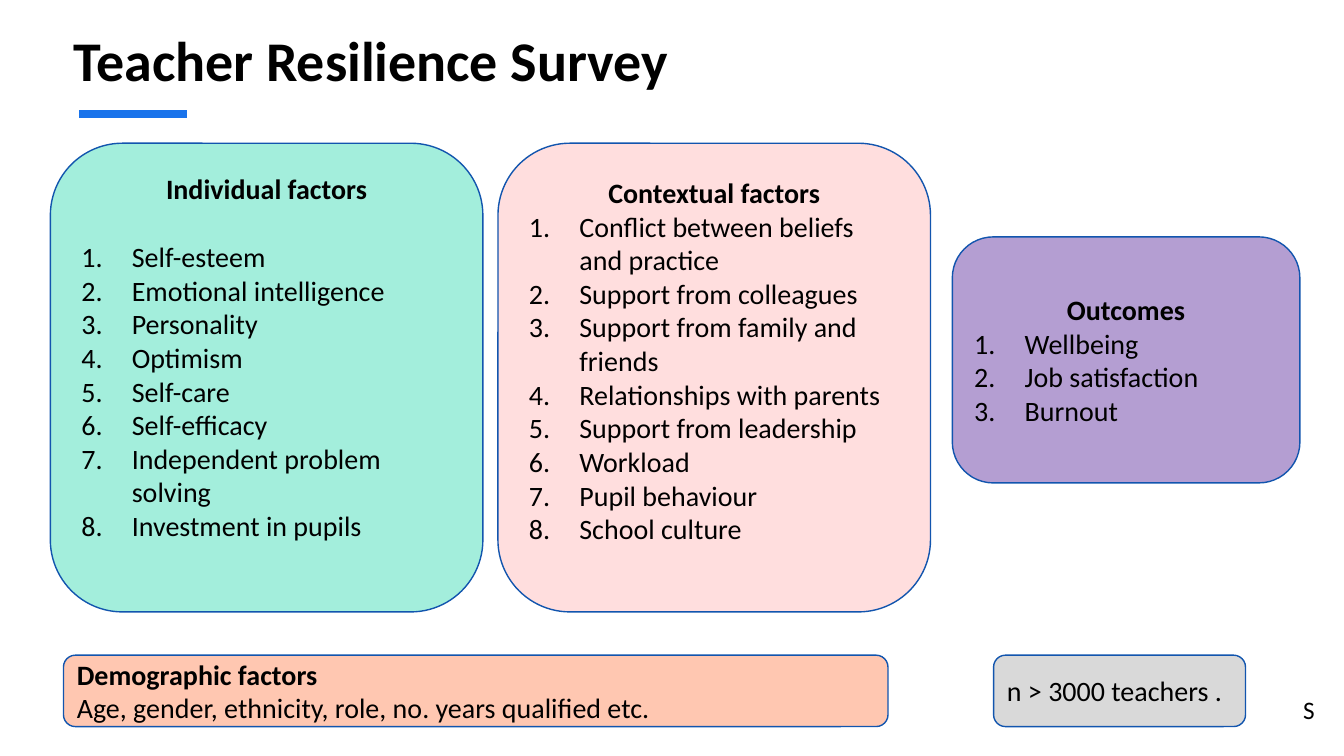
import pptx
import pptx.dml.color
import pptx.enum.shapes
import pptx.enum.text
import pptx.oxml.ns
import pptx.util
from lxml import etree

Cm, Pt = pptx.util.Cm, pptx.util.Pt
ALIGN = pptx.enum.text.PP_ALIGN
ANCHOR = pptx.enum.text.MSO_ANCHOR
INDENT = Cm(1.27)
TEXT_LINE = Pt(24.4)


def rgb(code):
    return pptx.dml.color.RGBColor.from_string(code)


def write(paragraph, text, size=20, bold=False, align=ALIGN.LEFT):
    paragraph.alignment = align
    run = paragraph.add_run()
    run.text = text
    for name, value in {"name": "Calibri", "size": Pt(size), "bold": bold}.items():
        setattr(run.font, name, value)
    run.font.color.rgb = rgb("000000")


deck = pptx.Presentation()
deck.slide_width, deck.slide_height = Cm(33.87), Cm(19.05)
slide = deck.slides.add_slide(deck.slide_layouts[5])

# Title and its underline
title = slide.shapes.title
title_format = {"left": Cm(1.6), "top": Cm(0.36), "width": Cm(29.21), "height": Cm(2.24)}
for name, value in title_format.items():
    setattr(title, name, value)
title.text_frame.vertical_anchor = ANCHOR.MIDDLE
write(title.text_frame.paragraphs[0], "Teacher Resilience Survey", size=40, bold=True)

underline = slide.shapes.add_connector(
    pptx.enum.shapes.MSO_CONNECTOR.STRAIGHT, Cm(2), Cm(2.87), Cm(4.7), Cm(2.87))
underline.line.color.rgb = rgb("1973EB")
underline.line.width = Pt(6)
etree.SubElement(underline.element.spPr, pptx.oxml.ns.qn("a:effectLst"))

# Factor panels: place, fill, heading, gap below heading, bottom inset, body, numbered
panels = [
    ((1.27, 3.61, 10.9, 11.81), "A3EEDC", "Individual factors", TEXT_LINE, 1.16, [
        "Self-esteem", "Emotional intelligence", "Personality", "Optimism", "Self-care",
        "Self-efficacy", "Independent problem solving", "Investment in pupils"], True),
    ((12.55, 3.61, 10.9, 11.81), "FFDEDE", "Contextual factors", 0, 0.99, [
        "Conflict between beliefs and practice", "Support from colleagues",
        "Support from family and friends", "Relationships with parents",
        "Support from leadership", "Workload", "Pupil behaviour", "School culture"], True),
    ((1.6, 16.51, 20.78, 1.8), "FFC7B1", "Demographic factors", 0, 0.13, [
        "Age, gender, ethnicity, role, no. years qualified etc."], False),
    ((24, 5.97, 8.76, 6.2), "B49ED2", "Outcomes", 0, 0.13, [
        "Wellbeing", "Job satisfaction", "Burnout"], True),
    ((25.04, 16.51, 6.35, 1.8), "D9D9D9", None, 0, 0.13, ["n > 3000 teachers ."], False),
]

for place, fill, heading, heading_gap, bottom_inset, entries, numbered in panels:
    panel = slide.shapes.add_shape(
        pptx.enum.shapes.MSO_SHAPE.ROUNDED_RECTANGLE, *map(Cm, place))
    panel.shadow.inherit = False
    panel.fill.solid()
    panel.fill.fore_color.rgb = rgb(fill)
    panel.line.color.rgb = rgb("1255AE")
    panel.line.width = Pt(1)
    frame = panel.text_frame
    frame_format = {"word_wrap": True, "vertical_anchor": ANCHOR.MIDDLE,
                    "margin_bottom": Cm(bottom_inset)}
    for name, value in frame_format.items():
        setattr(frame, name, value)

    paragraph = frame.paragraphs[0]
    if heading:
        write(paragraph, heading, bold=True, align=ALIGN.CENTER if numbered else ALIGN.LEFT)
        paragraph.space_after = heading_gap
    for index, entry in enumerate(entries):
        if heading or index:
            paragraph = frame.add_paragraph()
        write(paragraph, entry)
        if numbered:
            properties = paragraph._p.get_or_add_pPr()
            properties.set("marL", str(INDENT))
            properties.set("indent", str(-INDENT))
            etree.SubElement(properties, pptx.oxml.ns.qn("a:buAutoNum"), type="arabicPeriod")

# Corner letter
corner = slide.shapes.add_textbox(Cm(32.59), Cm(17.37), Cm(1.27), Cm(1.02))
corner.text_frame.word_wrap = True
write(corner.text_frame.paragraphs[0], "S", size=18)

deck.save("out.pptx")
